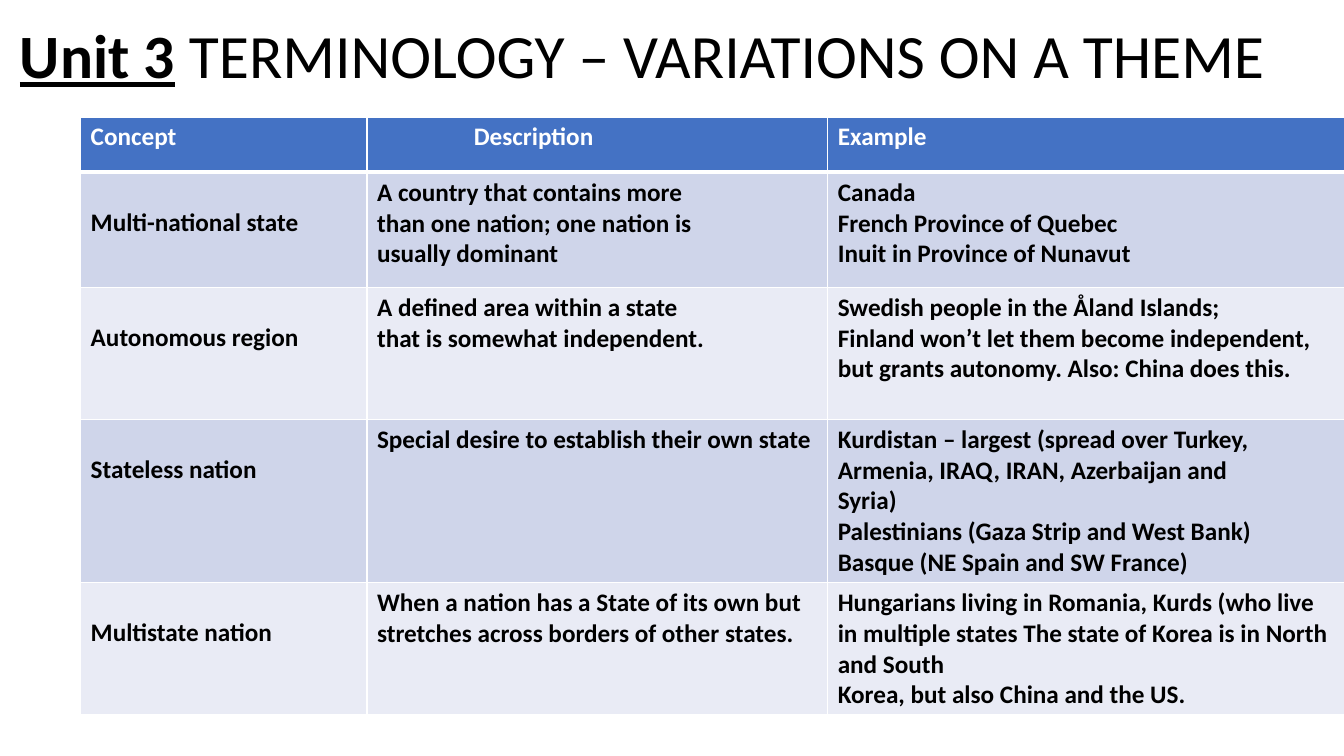
"""Build the Unit 3 terminology slide."""
from dataclasses import dataclass

from lxml import etree
from pptx import Presentation, util as u
from pptx.dml.color import RGBColor
from pptx.enum import text
from pptx.oxml import ns


@dataclass(frozen=True)
class Theme:
    """Colours, font and type sizes of the slide."""
    font: str = "Calibri"
    title_size: int = 44
    cell_size: int = 18
    ink: str = "000000"
    white: str = "FFFFFF"
    header: str = "4472C4"
    bands: tuple = ("CFD5EA", "E9EBF5")


THEME = Theme()
COLUMN_WIDTHS = (2.84, 4.57, 5.13)
ROW_HEIGHTS = (0.55, 1.14, 1.31, 1.62, 1.31)
HEADINGS = ("Concept", "Description", "Example")
TERMS = (
    ("Multi-national state",
     ("A country that contains more",
      "than one nation; one nation is",
      "usually dominant"),
     ("Canada", "French Province of Quebec", "Inuit in Province of Nunavut")),
    ("Autonomous region",
     ("A defined area within a state", "that is somewhat independent."),
     ("Swedish people in the Åland Islands;",
      "Finland won’t let them become independent, "
      "but grants autonomy. Also: China does this.")),
    ("Stateless nation",
     ("Special desire to establish their own state",),
     ("Kurdistan – largest (spread over Turkey,",
      "Armenia, IRAQ, IRAN, Azerbaijan and",
      "Syria)",
      "Palestinians (Gaza Strip and West Bank)",
      "Basque (NE Spain and SW France)")),
    ("Multistate nation",
     ("When a nation has a State of its own but "
      "stretches across borders of other states.",),
     ("Hungarians living in Romania, Kurds (who live in multiple states "
      "The state of Korea is in North and South",
      "Korea, but also China and the US.")),
)


def add_span(para, words, size, color, bold=False, underline=False):
    """Add one formatted run to a paragraph."""
    span = para.add_run()
    span.text = words
    span.font.name = THEME.font
    span.font.size = u.Pt(size)
    span.font.bold = bold
    span.font.underline = underline
    span.font.color.rgb = RGBColor.from_string(color)


def add_title(page):
    """Add the title with its underlined unit number."""
    box = page.shapes.add_textbox(u.Inches(0.1), u.Inches(0), u.Inches(13.06), u.Inches(1.16))
    frame = box.text_frame
    frame.word_wrap = True
    frame.vertical_anchor = text.MSO_ANCHOR.MIDDLE
    para = frame.paragraphs[0]
    para.line_spacing = 0.9
    add_span(para, "Unit 3", THEME.title_size, THEME.ink, bold=True, underline=True)
    add_span(para, " TERMINOLOGY – VARIATIONS ON A THEME", THEME.title_size, THEME.ink)


def set_borders(cell, bottom):
    """Draw white cell borders, with the bottom width given in points."""
    properties = cell._tc.get_or_add_tcPr()
    for side, width in (("L", 1), ("R", 1), ("T", 1), ("B", bottom)):
        line = etree.SubElement(properties, ns.qn(f"a:ln{side}"), w=str(u.Pt(width)))
        fill = etree.SubElement(line, ns.qn("a:solidFill"))
        etree.SubElement(fill, ns.qn("a:srgbClr"), val=THEME.white)


def fill_cell(cell, lines, color, background, bottom=1):
    """Format a cell and write one paragraph per line."""
    set_borders(cell, bottom)
    cell.fill.solid()
    cell.fill.fore_color.rgb = RGBColor.from_string(background)
    frame = cell.text_frame
    for index, line in enumerate(lines):
        para = frame.add_paragraph() if index else frame.paragraphs[0]
        add_span(para, line, THEME.cell_size, color, bold=True)


def add_terms_table(page):
    """Add the table of concepts, descriptions and examples."""
    table = page.shapes.add_table(
        len(ROW_HEIGHTS), len(COLUMN_WIDTHS), u.Inches(0.8), u.Inches(1.16),
        u.Inches(sum(COLUMN_WIDTHS)), u.Inches(sum(ROW_HEIGHTS))).table
    for column, width in zip(table.columns, COLUMN_WIDTHS):
        column.width = u.Inches(width)
    for row, height in zip(table.rows, ROW_HEIGHTS):
        row.height = u.Inches(height)

    for index, heading in enumerate(HEADINGS):
        fill_cell(table.cell(0, index), (heading,), THEME.white, THEME.header, bottom=3)
    table.cell(0, 1).margin_left = u.Inches(1.06)

    for number, (concept, *details) in enumerate(TERMS, start=1):
        band = THEME.bands[(number - 1) % len(THEME.bands)]
        for index, lines in enumerate(((concept,), *details)):
            fill_cell(table.cell(number, index), lines, THEME.ink, band)
        table.cell(number, 0).margin_top = u.Inches(0.35)


def main():
    """Create and save the deck."""
    deck = Presentation()
    deck.slide_width = u.Inches(13.33)
    deck.slide_height = u.Inches(7.5)
    page = deck.slides.add_slide(deck.slide_layouts[6])
    add_title(page)
    add_terms_table(page)
    deck.save("out.pptx")


if __name__ == "__main__":
    main()
